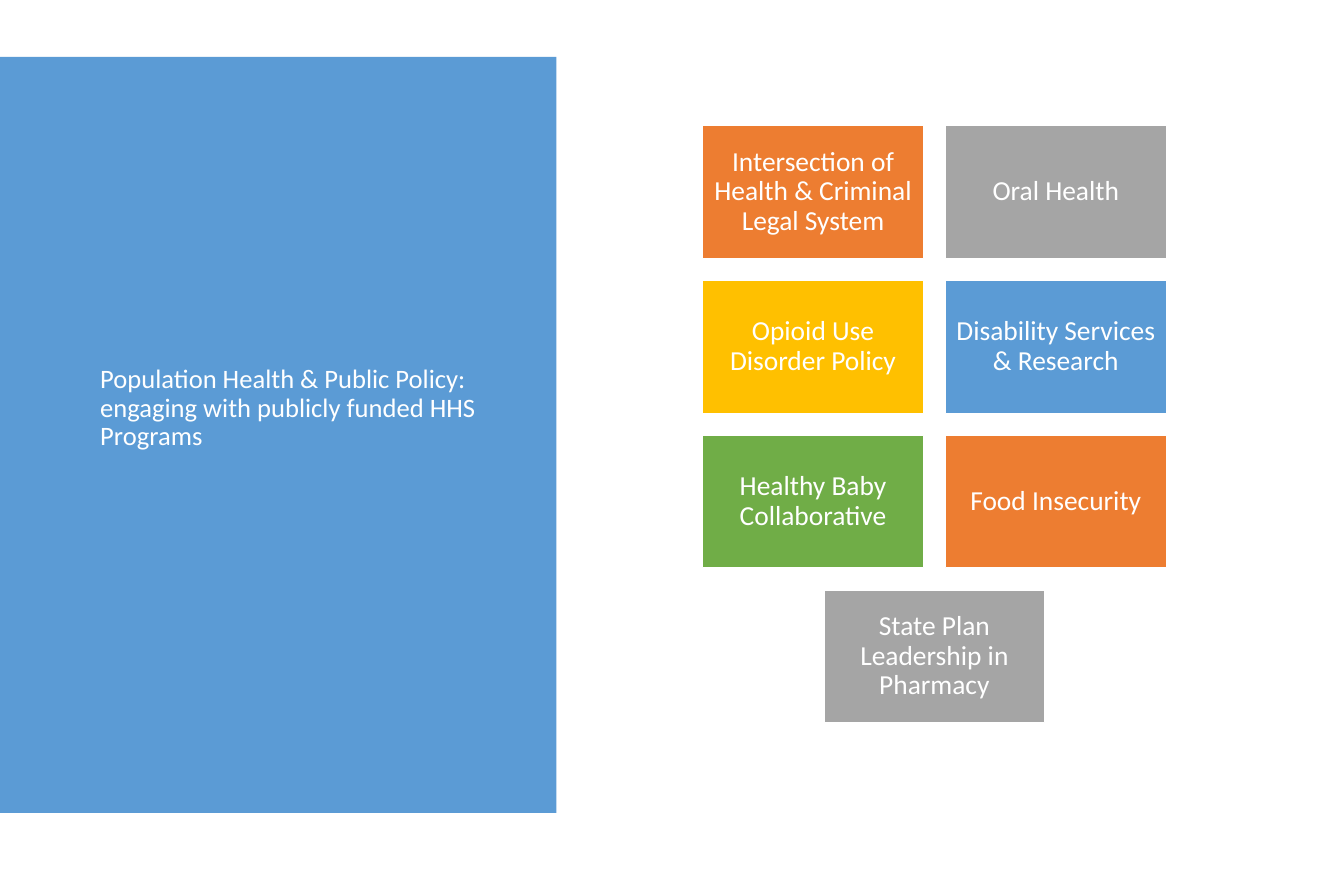
from pptx import Presentation
from pptx.dml.color import RGBColor
from pptx.enum.shapes import MSO_SHAPE as Preset
from pptx.enum.text import MSO_ANCHOR as Anchor, PP_ALIGN as Align
from pptx.util import Cm, Pt

WHITE = RGBColor(0xFF, 0xFF, 0xFF)
BLUE = RGBColor(0x5B, 0x9B, 0xD5)
ORANGE = RGBColor(0xED, 0x7D, 0x31)
GRAY = RGBColor(0xA5, 0xA5, 0xA5)
GOLD = RGBColor(0xFF, 0xC0, 0x00)
GREEN = RGBColor(0x70, 0xAD, 0x47)

HEADLINE = ("Population Health & Public Policy: "
            "engaging with publicly funded HHS Programs")
PROGRAM_ROWS = [
    [("Intersection of Health & Criminal Legal System", ORANGE),
     ("Oral Health", GRAY)],
    [("Opioid Use Disorder Policy", GOLD),
     ("Disability Services & Research", BLUE)],
    [("Healthy Baby Collaborative", GREEN),
     ("Food Insecurity", ORANGE)],
    [("State Plan Leadership in Pharmacy", GRAY)],
]

GRID_CENTER, GRID_TOP = 30.02, 4.04
TILE_WIDTH, TILE_HEIGHT, TILE_GAP = 7.09, 4.26, 0.71


def write_text(frame, text, *, size, font="Calibri", color=WHITE,
               align=Align.LEFT, insets=(0.25, 0.25, 0.25, 0.25)):
    """Fill a text frame; insets are left, top, right, bottom in cm."""
    frame.word_wrap = True
    frame.vertical_anchor = Anchor.MIDDLE
    (frame.margin_left, frame.margin_top,
     frame.margin_right, frame.margin_bottom) = map(Cm, insets)
    paragraph = frame.paragraphs[0]
    paragraph.alignment = align
    paragraph.line_spacing = 0.9
    run = paragraph.add_run()
    run.text = text
    run.font.name = font
    run.font.size = Pt(size)
    run.font.color.rgb = color


class SlideBuilder:
    def __init__(self, slide):
        self.slide = slide
        self.headline_size = 24.2
        self.tile_size = 25

    def block(self, left, top, width, height, fill, outline=None):
        rectangle = self.slide.shapes.add_shape(
            Preset.RECTANGLE, Cm(left), Cm(top), Cm(width), Cm(height))
        rectangle.shadow.inherit = False
        rectangle.fill.solid()
        rectangle.fill.fore_color.rgb = fill
        if outline is None:
            rectangle.line.fill.background()
        else:
            rectangle.line.color.rgb = outline
            rectangle.line.width = Pt(1)
        return rectangle

    def headline(self, left, top, width, height, text):
        box = self.slide.shapes.add_textbox(
            Cm(left), Cm(top), Cm(width), Cm(height))
        write_text(box.text_frame, text, size=self.headline_size,
                   insets=(0.25, 0.13, 0.25, 1.15))

    def tile(self, left, top, text, fill):
        tile = self.block(left, top, TILE_WIDTH, TILE_HEIGHT, fill, WHITE)
        write_text(tile.text_frame, text, size=self.tile_size,
                   align=Align.CENTER)

    def centered_rows(self, rows):
        """Lay out tiles row by row, each row centred on the grid."""
        for row_index, programs in enumerate(rows):
            count = len(programs)
            row_width = count * TILE_WIDTH + (count - 1) * TILE_GAP
            row_left = GRID_CENTER - row_width / 2
            top = GRID_TOP + row_index * (TILE_HEIGHT + TILE_GAP)
            for column, (program, fill) in enumerate(programs):
                left = row_left + column * (TILE_WIDTH + TILE_GAP)
                self.tile(left, top, program, fill)


def main():
    deck = Presentation()
    deck.slide_width, deck.slide_height = Cm(43.18), Cm(27.94)
    builder = SlideBuilder(deck.slides.add_slide(deck.slide_layouts[6]))
    builder.block(0, 1.83, 17.88, 24.28, BLUE)
    builder.headline(2.97, 4.04, 13.34, 19.18, HEADLINE)
    builder.centered_rows(PROGRAM_ROWS)
    deck.save("out.pptx")


if __name__ == "__main__":
    main()
